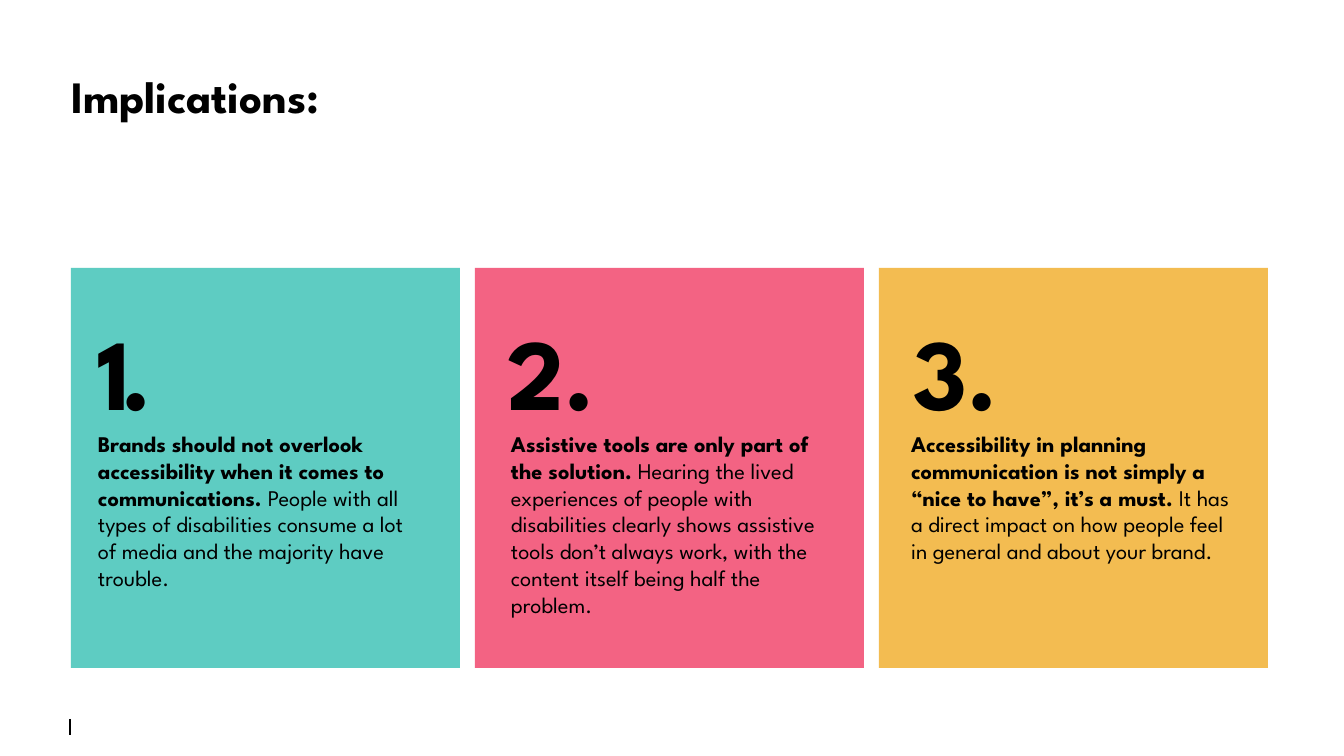
from dataclasses import dataclass

from lxml import etree
from pptx import Presentation
from pptx.dml.color import RGBColor
from pptx.enum.shapes import MSO_CONNECTOR, MSO_SHAPE
from pptx.enum.text import MSO_ANCHOR, MSO_AUTO_SIZE, PP_ALIGN
from pptx.oxml.ns import qn
from pptx.util import Emu, Pt

RECTANGLE = MSO_SHAPE.RECTANGLE
STRAIGHT = MSO_CONNECTOR.STRAIGHT
TOP = MSO_ANCHOR.TOP
LEFT = PP_ALIGN.LEFT
NO_FIT = MSO_AUTO_SIZE.NONE
TITLE_ONLY = 5


@dataclass(frozen=True)
class Theme:
    font: str = "League Spartan"
    ink: str = "000000"
    paper: str = "FFFFFF"
    teal: str = "3BC1B5"
    pink: str = "F36383"
    amber: str = "F3BC51"
    title_size: int = 24
    number_size: int = 54
    body_size: int = 12
    rule_width: float = 1.25


THEME = Theme()
PAGE_WIDTH, PAGE_HEIGHT = 1344, 756
CARD_LEFT, CARD_TOP, CARD_WIDTH, CARD_HEIGHT, CARD_GAP = 71, 268, 389, 400, 15

# Indents and text widths are measured within each card
CARDS = [
    dict(color=THEME.teal, opacity=82, number="1.", spacing=-5,
         number_indent=27, body_indent=27, body_width=328, body_height=163,
         lead="Brands should not overlook accessibility when it comes to communications. ",
         detail="People with all types of disabilities consume a lot of media "
                "and the majority have trouble."),
    dict(color=THEME.pink, opacity=100, number="2.", spacing=0,
         number_indent=32, body_indent=36, body_width=317, body_height=190,
         lead="Assistive tools are only part of the solution. ",
         detail="Hearing the lived experiences of people with disabilities clearly "
                "shows assistive tools don’t always work, with the content itself "
                "being half the problem."),
    dict(color=THEME.amber, opacity=100, number="3.", spacing=0,
         number_indent=34, body_indent=32, body_width=319, body_height=163,
         lead="Accessibility in planning communication is not simply a "
              "“nice to have”, it’s a must.",
         detail=" It has a direct impact on how people feel in general "
                "and about your brand."),
]


def px(length):
    return Emu(round(length * 914400 / 134.4))


def color(value):
    return RGBColor.from_string(value)


def prepare_frame(box):
    frame = box.text_frame
    frame.margin_left = frame.margin_top = frame.margin_right = frame.margin_bottom = 0
    frame.auto_size = NO_FIT
    frame.word_wrap = True
    frame.vertical_anchor = TOP
    para = frame.paragraphs[0]
    para.alignment = LEFT
    return para


def add_span(para, text, size, bold=True):
    span = para.add_run()
    span.text = text
    span.font.name = THEME.font
    span.font.size = Pt(size)
    span.font.bold = bold
    span.font.color.rgb = color(THEME.ink)
    return span


def add_text_box(page, left, top, width, height):
    return prepare_frame(page.shapes.add_textbox(px(left), px(top), px(width), px(height)))


def add_title(page, left, top, width, height):
    title = page.shapes.title
    title.left, title.top, title.width, title.height = map(px, (left, top, width, height))
    add_span(prepare_frame(title), "Implications:", THEME.title_size)


def add_card(page, left, top, width, height, card):
    # Coloured panel
    panel = page.shapes.add_shape(RECTANGLE, px(left), px(top), px(width), px(height))
    panel.shadow.inherit = False
    panel.fill.solid()
    panel.fill.fore_color.rgb = color(card["color"])
    panel.line.fill.background()
    if card["opacity"] < 100:
        tint = panel.fill._xPr.find(f".//{qn('a:srgbClr')}")
        etree.SubElement(tint, qn("a:alpha"), val=str(card["opacity"] * 1000))

    # Large number
    para = add_text_box(page, left + card["number_indent"], top + 65, 155, 82)
    para.line_spacing = 0.8
    span = add_span(para, card["number"], THEME.number_size)
    if card["spacing"]:
        span.font._element.set("spc", str(card["spacing"] * 100))

    # Bold statement followed by its explanation
    para = add_text_box(page, left + card["body_indent"], top + 162,
                        card["body_width"], card["body_height"])
    add_span(para, card["lead"], THEME.body_size)
    add_span(para, card["detail"], THEME.body_size, bold=False)


def add_footer_rule(page, left, top, height):
    rule = page.shapes.add_connector(STRAIGHT, px(left), px(top), px(left), px(top + height))
    rule.line.color.rgb = color(THEME.ink)
    rule.line.width = Pt(THEME.rule_width)
    etree.SubElement(rule._element.spPr, qn("a:effectLst"))


def main():
    deck = Presentation()
    deck.slide_width, deck.slide_height = px(PAGE_WIDTH), px(PAGE_HEIGHT)
    page = deck.slides.add_slide(deck.slide_layouts[TITLE_ONLY])
    page.background.fill.solid()
    page.background.fill.fore_color.rgb = color(THEME.paper)

    add_footer_rule(page, 70, 719, 16)
    add_title(page, CARD_LEFT, 69, 1197, 82)
    for index, card in enumerate(CARDS):
        left = CARD_LEFT + index * (CARD_WIDTH + CARD_GAP)
        add_card(page, left, CARD_TOP, CARD_WIDTH, CARD_HEIGHT, card)

    deck.save("out.pptx")


if __name__ == "__main__":
    main()
